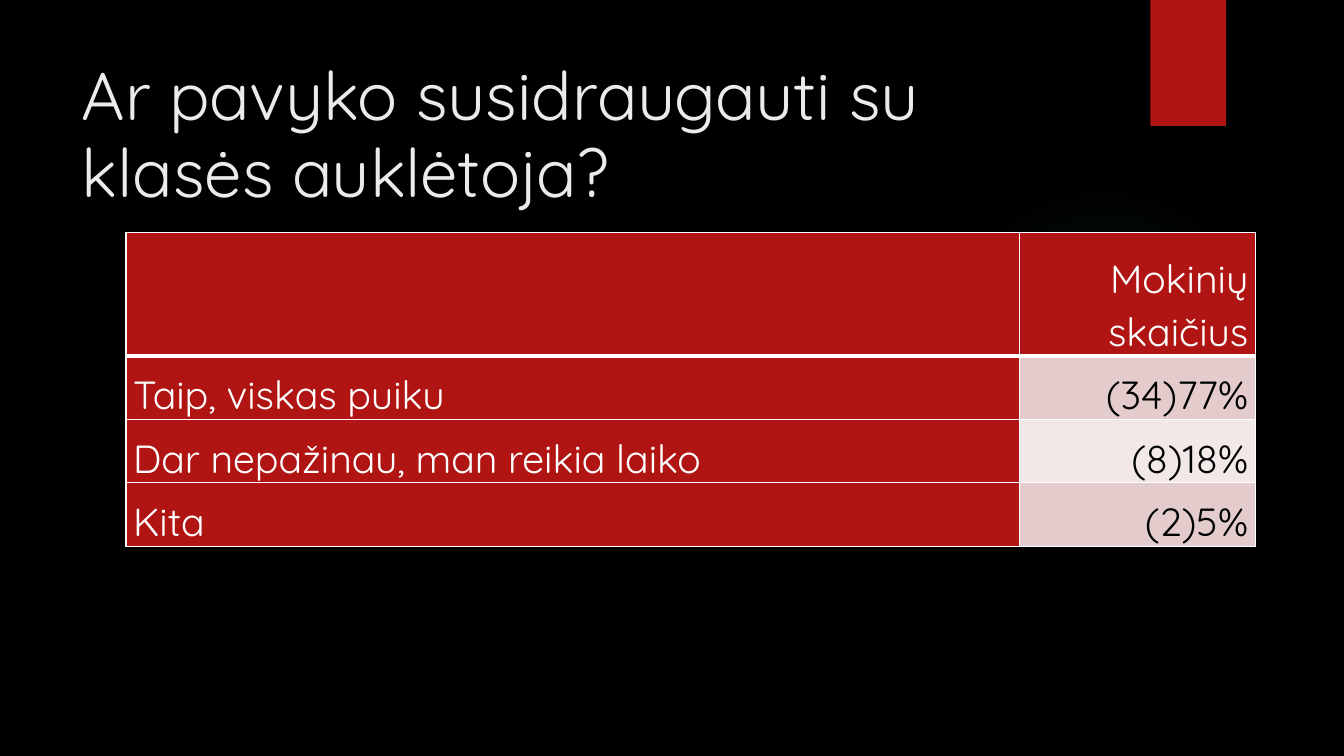
from dataclasses import dataclass

from lxml.etree import SubElement
from pptx import Presentation
from pptx.dml.color import RGBColor
from pptx.enum.shapes import MSO_SHAPE
from pptx.enum.text import MSO_ANCHOR, MSO_AUTO_SIZE, PP_ALIGN
from pptx.oxml import parse_xml
from pptx.oxml.ns import nsdecls, qn
from pptx.shapes.autoshape import Shape
from pptx.slide import Slide
from pptx.table import _Cell
from pptx.text.text import TextFrame
from pptx.util import Inches, Pt

SLIDE_WIDTH = Inches(13.33)
SLIDE_HEIGHT = Inches(7.5)
FONT = "Quicksand"
BLACK = RGBColor(0x00, 0x00, 0x00)
WHITE = RGBColor(0xFF, 0xFF, 0xFF)
TITLE_GRAY = RGBColor(0xEB, 0xEB, 0xEB)
RED = RGBColor(0xB0, 0x15, 0x13)
DARK_BAND = RGBColor(0xE4, 0xCC, 0xCC)
LIGHT_BAND = RGBColor(0xF2, 0xE8, 0xE7)
TEAL = RGBColor(0x50, 0xB9, 0xC1)


@dataclass(frozen=True)
class Area:
    """Position and size in percent of the slide's width and height."""
    left: float
    top: float
    width: float
    height: float

    def box(self) -> tuple[int, int, int, int]:
        return (across(self.left), down(self.top),
                across(self.width), down(self.height))


@dataclass(frozen=True)
class Answer:
    label: str
    count: str
    band: RGBColor


TITLE_AREA = Area(5.33, 6.67, 77.18, 20.4)
GLOW_AREA = Area(70.59, 24.4, 23.1, 41.07)
RIBBON_AREA = Area(85.6, 0, 5.63, 16.67)
TABLE_AREA = Area(9.38, 30.8, 84.02, 41.47)
COLUMN_SHARES = (66.47, 17.55)
HEADER_SHARE = 16.27
ANSWER_SHARE = 8.4
GLOW_STOPS = ((0, 7), (36, 6), (69, 0))
ANSWERS = (
    Answer("Taip, viskas puiku", "(34)77%", DARK_BAND),
    Answer("Dar nepažinau, man reikia laiko", "(8)18%", LIGHT_BAND),
    Answer("Kita", "(2)5%", DARK_BAND),
)


def across(percent: float) -> int:
    return round(SLIDE_WIDTH * percent / 100)


def down(percent: float) -> int:
    return round(SLIDE_HEIGHT * percent / 100)


def write_text(frame: TextFrame, text: str, *, size: float, color: RGBColor,
               align: PP_ALIGN = PP_ALIGN.LEFT, spacing: float = 1.0,
               after: float = 0) -> None:
    frame.text = text
    paragraph = frame.paragraphs[0]
    paragraph.alignment = align
    paragraph.line_spacing = spacing
    paragraph.space_before = Pt(0)
    paragraph.space_after = Pt(after)
    paragraph.font.name = FONT
    paragraph.font.size = Pt(size)
    paragraph.font.color.rgb = color


def add_plain_shape(slide: Slide, kind: MSO_SHAPE, area: Area) -> Shape:
    shape = slide.shapes.add_shape(kind, *area.box())
    shape.shadow.inherit = False
    shape.line.fill.background()
    return shape


def add_glow(slide: Slide) -> None:
    glow = add_plain_shape(slide, MSO_SHAPE.OVAL, GLOW_AREA)
    stops = "".join(
        f'<a:gs pos="{position * 1000}"><a:srgbClr val="{TEAL}">'
        f'<a:alpha val="{opacity * 1000}"/></a:srgbClr></a:gs>'
        for position, opacity in GLOW_STOPS)
    gradient = parse_xml(
        f'<a:gradFill {nsdecls("a")}><a:gsLst>{stops}</a:gsLst>'
        '<a:path path="circle"><a:fillToRect l="50000" t="50000" '
        'r="50000" b="50000"/></a:path></a:gradFill>')
    glow.element.spPr.find(qn("a:prstGeom")).addnext(gradient)


def add_ribbon(slide: Slide) -> None:
    ribbon = add_plain_shape(slide, MSO_SHAPE.RECTANGLE, RIBBON_AREA)
    ribbon.fill.solid()
    ribbon.fill.fore_color.rgb = RED


def place_title(slide: Slide, text: str) -> None:
    title = slide.shapes.title
    title.left, title.top, title.width, title.height = TITLE_AREA.box()
    frame = title.text_frame
    frame.word_wrap = True
    frame.auto_size = MSO_AUTO_SIZE.NONE
    frame.vertical_anchor = MSO_ANCHOR.TOP
    frame.margin_top = Inches(0.09)
    write_text(frame, text, size=48, color=TITLE_GRAY, spacing=0.95)


def format_cell(cell: _Cell, fill: RGBColor, bottom: float = 1,
                top: float = 1) -> None:
    cell.vertical_anchor = MSO_ANCHOR.BOTTOM
    cell.margin_left = cell.margin_right = Inches(0.07)
    cell.margin_top = cell.margin_bottom = 0
    properties = cell._tc.get_or_add_tcPr()
    for side, width in (("L", 1), ("R", 1), ("T", top), ("B", bottom)):
        border = SubElement(properties, qn(f"a:ln{side}"), w=str(Pt(width)))
        solid = SubElement(border, qn("a:solidFill"))
        SubElement(solid, qn("a:srgbClr"), val=str(WHITE))
    cell.fill.solid()
    cell.fill.fore_color.rgb = fill


def write_cell(cell: _Cell, text: str, color: RGBColor,
               align: PP_ALIGN) -> None:
    write_text(cell.text_frame, text, size=28, color=color, align=align,
               spacing=1.07, after=8)


def add_answer_table(slide: Slide) -> None:
    table = slide.shapes.add_table(
        len(ANSWERS) + 1, len(COLUMN_SHARES), *TABLE_AREA.box()).table
    for column, share in zip(table.columns, COLUMN_SHARES):
        column.width = across(share)
    for index, row in enumerate(table.rows):
        row.height = down(ANSWER_SHARE if index else HEADER_SHARE)

    for cell in table.rows[0].cells:
        format_cell(cell, RED, bottom=3)
    write_cell(table.cell(0, 1), "Mokinių skaičius", WHITE, PP_ALIGN.RIGHT)

    for index, answer in enumerate(ANSWERS, start=1):
        label, count = table.cell(index, 0), table.cell(index, 1)
        top = 3 if index == 1 else 1
        format_cell(label, RED, top=top)
        format_cell(count, answer.band, top=top)
        write_cell(label, answer.label, WHITE, PP_ALIGN.LEFT)
        write_cell(count, answer.count, BLACK, PP_ALIGN.RIGHT)


def main() -> None:
    presentation = Presentation()
    presentation.slide_width = SLIDE_WIDTH
    presentation.slide_height = SLIDE_HEIGHT
    slide = presentation.slides.add_slide(presentation.slide_layouts[5])
    slide.background.fill.solid()
    slide.background.fill.fore_color.rgb = BLACK
    add_glow(slide)
    add_ribbon(slide)
    place_title(slide, "Ar pavyko susidraugauti su klasės auklėtoja?")
    add_answer_table(slide)
    presentation.save("out.pptx")


if __name__ == "__main__":
    main()
